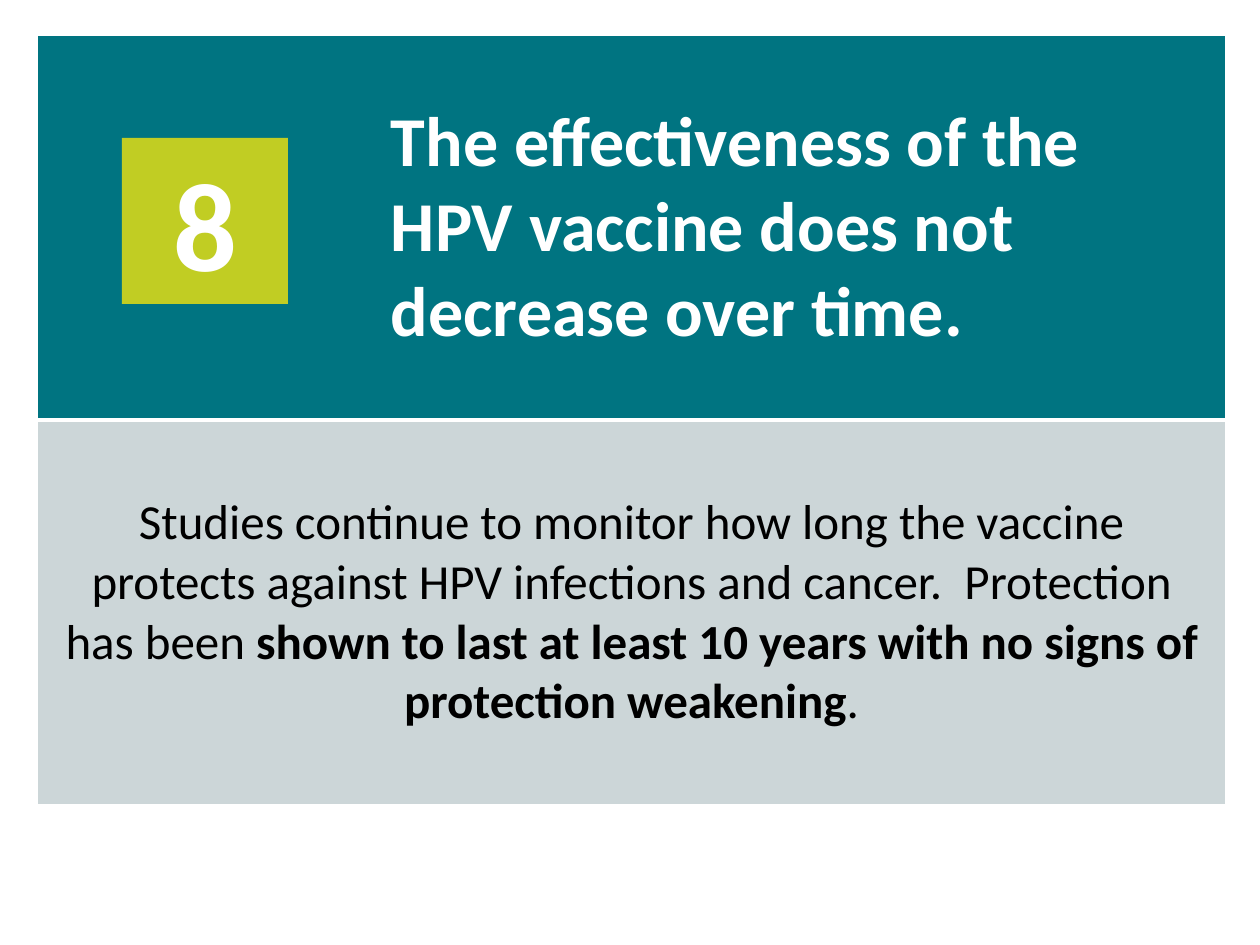
import pptx
import pptx.util
import pptx.dml.color
import pptx.enum.shapes
import pptx.enum.text
import pptx.oxml.ns
import lxml.etree

PX = 914400 // 126
TEAL = pptx.dml.color.RGBColor(0x00, 0x74, 0x81)
GREY = pptx.dml.color.RGBColor(0xCC, 0xD6, 0xD8)
LIME = pptx.dml.color.RGBColor(0xC1, 0xCD, 0x23)
WHITE = pptx.dml.color.RGBColor(0xFF, 0xFF, 0xFF)
BLACK = pptx.dml.color.RGBColor(0x00, 0x00, 0x00)
CENTER = pptx.enum.text.PP_ALIGN.CENTER
LEFT = pptx.enum.text.PP_ALIGN.LEFT
MIDDLE = pptx.enum.text.MSO_ANCHOR.MIDDLE


class Builder:
    """Holds the style and the current slide, and adds elements to it."""

    font = "Calibri"
    margin = 19

    def __init__(self, slide):
        self.slide = slide

    def add_text(self, tf, runs, size, color, align):
        p = tf.paragraphs[0]
        p.alignment = align
        for text, bold in runs:
            r = p.add_run()
            r.text = text
            r.font.name = self.font
            r.font.size = pptx.util.Pt(size)
            r.font.bold = bold
            r.font.color.rgb = color

    def table(self, x, y, cols, rows):
        width, height = sum(cols) * PX, sum(rows) * PX
        frame = self.slide.shapes.add_table(len(rows), len(cols), x * PX, y * PX, width, height)
        table = frame.table
        table.first_row = table.horz_banding = False
        for col, w in zip(table.columns, cols):
            col.width = w * PX
        for row, h in zip(table.rows, rows):
            row.height = h * PX
        return table

    def cell(self, cell, fill, **borders):
        for side in "LRTB":
            points = borders.get(side, 0)
            tag = pptx.oxml.ns.qn(f"a:ln{side}")
            ln = lxml.etree.SubElement(cell._tc.get_or_add_tcPr(), tag, w=str(points * 12700))
            if points:
                solid = lxml.etree.SubElement(ln, pptx.oxml.ns.qn("a:solidFill"))
                lxml.etree.SubElement(solid, pptx.oxml.ns.qn("a:srgbClr"), val=str(WHITE))
            else:
                lxml.etree.SubElement(ln, pptx.oxml.ns.qn("a:noFill"))
        cell.fill.solid()
        cell.fill.fore_color.rgb = fill
        cell.vertical_anchor = MIDDLE
        cell.margin_left = cell.margin_right = self.margin * PX
        cell.margin_top = cell.margin_bottom = self.margin * PX

    def square(self, x, y, size, fill, text):
        kind = pptx.enum.shapes.MSO_SHAPE.RECTANGLE
        sp = self.slide.shapes.add_shape(kind, x * PX, y * PX, size * PX, size * PX)
        sp.shadow.inherit = False
        sp.fill.solid()
        sp.fill.fore_color.rgb = fill
        sp.line.fill.background()
        sp.text_frame.vertical_anchor = MIDDLE
        self.add_text(sp.text_frame, [(text, True)], 72, WHITE, CENTER)


def main():
    prs = pptx.Presentation()
    prs.slide_width = 1260 * PX
    prs.slide_height = 945 * PX
    b = Builder(prs.slides.add_slide(prs.slide_layouts[6]))

    table = b.table(37, 35, [335, 854], [385, 385])
    number, title = table.cell(0, 0), table.cell(0, 1)
    body, spanned = table.cell(1, 0), table.cell(1, 1)
    body.merge(spanned)
    b.cell(number, TEAL, L=1, T=1, B=3)
    b.cell(title, TEAL, R=1, T=1, B=3)
    b.cell(body, GREY, L=1, R=1, T=3, B=1)
    b.cell(spanned, GREY, R=1, T=3, B=1)
    b.add_text(title.text_frame, [
        ("The effectiveness of the HPV vaccine does not decrease over time.", True),
    ], 40, WHITE, LEFT)
    b.add_text(body.text_frame, [
        ("Studies continue to monitor how long the vaccine protects against HPV "
         "infections and cancer.  Protection has been ", False),
        ("shown to last at least 10 years with no signs of protection weakening", True),
        (".", False),
    ], 28, BLACK, CENTER)

    b.square(122, 138, 166, LIME, "8")
    prs.save("out.pptx")


if __name__ == "__main__":
    main()
